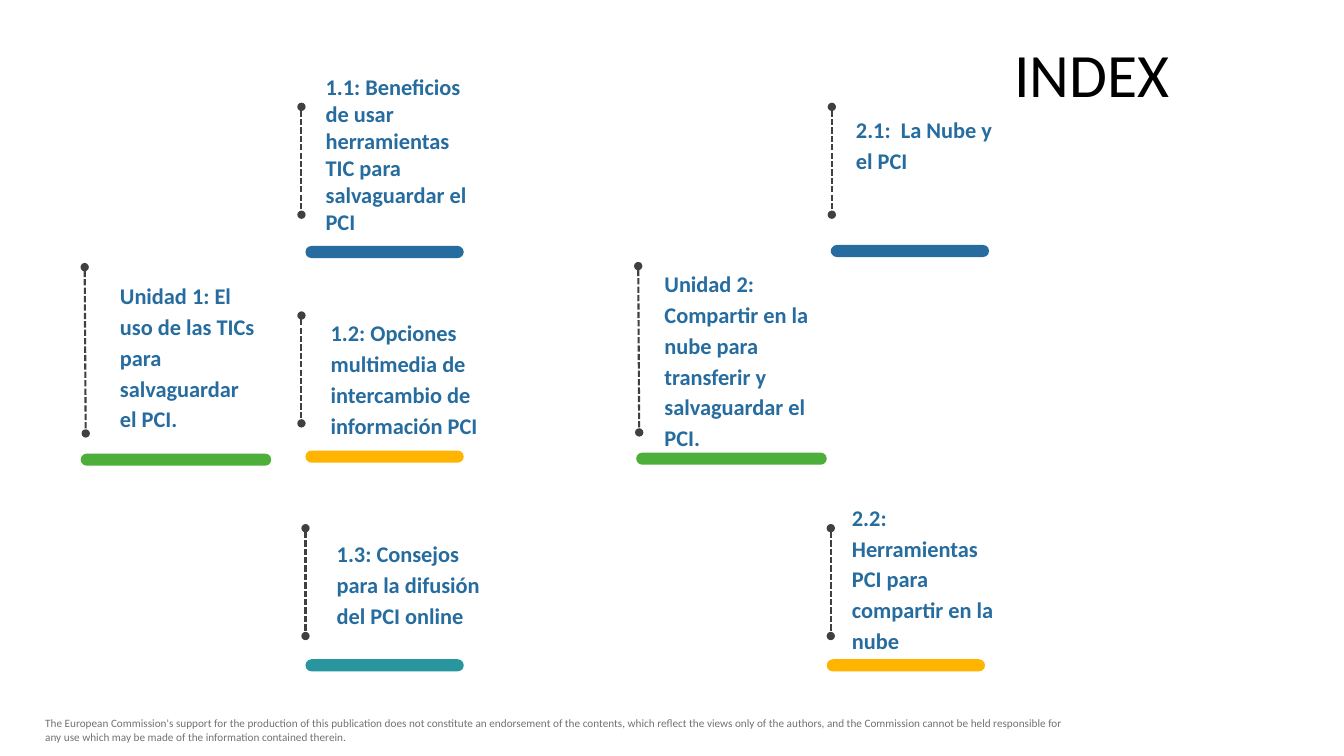
from dataclasses import dataclass

from lxml import etree
from pptx import Presentation
from pptx import util as u
from pptx.dml.color import RGBColor
from pptx.enum import dml, shapes, text
from pptx.oxml.ns import qn

TITLE = ("INDEX", (3.09, 0.37, 8.61, 0.79))
DISCLAIMER = (
    "The European Commission's support for the production of this publication does not "
    "constitute an endorsement of the contents, which reflect the views only of the authors, "
    "and the Commission cannot be held responsible for any use which may be made of the "
    "information contained therein.",
    (0.35, 7.06, 10.46, 0.37),
)


@dataclass
class Theme:
    font: str = "Calibri"
    title_size: int = 44
    entry_size: int = 16
    note_size: int = 8
    black: str = "000000"
    note: str = "767171"
    marker: str = "404040"
    blue: str = "266C9F"
    green: str = "4EAE3A"
    amber: str = "FFB500"
    teal: str = "27969F"


THEME = Theme()

# wording, text box, marker top (x, y), bar corner (x, y), bar colour
UNITS = [
    ("Unidad 1: El uso de las TICs para salvaguardar el PCI.",
     (0.82, 2.71, 1.87, 1.63), (0.84, 2.65), (0.8, 4.5), THEME.green),
    ("Unidad 2: Compartir en la nube para transferir y salvaguardar el PCI.",
     (6.22, 2.59, 2.08, 1.94), (6.33, 2.64), (6.31, 4.49), THEME.green),
]
TOPICS = [
    ("1.1: Beneficios de usar herramientas TIC para salvaguardar el PCI",
     (3.11, 0.68, 1.73, 1.72), (2.99, 1.06), (3.03, 2.44), THEME.blue),
    ("1.2: Opciones multimedia de intercambio de información PCI",
     (3.16, 3.08, 2.14, 1.32), (2.99, 3.13), (3.03, 4.47), THEME.amber),
    ("1.3: Consejos para la difusión del PCI online",
     (3.22, 5.27, 1.73, 1.01), (3.03, 5.24), (3.03, 6.54), THEME.teal),
    ("2.1:  La Nube y el PCI",
     (8.37, 1.06, 1.73, 0.7), (8.25, 1.06), (8.24, 2.43), THEME.blue),
    ("2.2:  Herramientas PCI para compartir en la nube",
     (8.33, 4.91, 1.73, 1.63), (8.24, 5.24), (8.2, 6.54), THEME.amber),
]
BAR_HEIGHT = 0.12
# marker lean and height, bar width, text indent
UNIT_STYLE = dict(lean=0.01, drop=1.65, bar_width=1.89, indent=0.25)
TOPIC_STYLE = dict(lean=0, drop=1.07, bar_width=1.57, indent=0)
SINGLE_SPACED = "1.1"
LOOSE = dict(line_spacing=1.15, space_after=u.Pt(10))
ENTRY_FRAME = dict(
    word_wrap=True, auto_size=text.MSO_AUTO_SIZE.SHAPE_TO_FIT_TEXT,
    margin_left=u.Inches(0.12), margin_right=u.Inches(0.12),
    margin_top=u.Inches(0.05), margin_bottom=u.Inches(0.05),
)


def inches(values):
    return [u.Inches(value) for value in values]


def apply(target, values):
    for name, value in values.items():
        setattr(target, name, value)


def write(box, words, size, colour, bold=False, frame=None, spacing=None):
    apply(box.text_frame, frame or {})
    para = box.text_frame.paragraphs[0]
    apply(para, spacing or {})
    span = para.add_run()
    span.text = words
    apply(span.font, dict(name=THEME.font, size=u.Pt(size), bold=bold))
    span.font.color.rgb = RGBColor.from_string(colour)
    return para


def add_marker(page, left, top, lean, drop):
    """Dashed upright line with a dot at each end."""
    ends = inches((left, top, left + lean, top + drop))
    marker = page.shapes.add_connector(shapes.MSO_CONNECTOR.STRAIGHT, *ends)
    apply(marker.line, dict(width=u.Pt(1.5), dash_style=dml.MSO_LINE.SQUARE_DOT))
    marker.line.color.rgb = RGBColor.from_string(THEME.marker)
    outline = marker.line._get_or_add_ln()
    for end in ("a:headEnd", "a:tailEnd"):
        etree.SubElement(outline, qn(end), type="oval")
    etree.SubElement(marker._element.spPr, qn("a:effectLst"))


def add_bar(page, left, top, width, colour):
    bar = page.shapes.add_shape(shapes.MSO_SHAPE.ROUNDED_RECTANGLE,
                                *inches((left, top, width, BAR_HEIGHT)))
    bar.adjustments[0] = 0.5
    bar.shadow.inherit = False
    bar.fill.solid()
    bar.fill.fore_color.rgb = RGBColor.from_string(colour)
    bar.line.fill.background()


def add_entry(page, entry, style):
    words, area, marker_top, bar_corner, colour = entry
    add_bar(page, *bar_corner, style["bar_width"], colour)
    box = page.shapes.add_textbox(*inches(area))
    spacing = {} if words.startswith(SINGLE_SPACED) else LOOSE
    para = write(box, words, THEME.entry_size, THEME.blue, True, ENTRY_FRAME, spacing)
    if style["indent"]:
        properties = para._p.get_or_add_pPr()
        properties.set("marL", str(u.Inches(style["indent"])))
        properties.set("indent", "0")
    add_marker(page, *marker_top, style["lean"], style["drop"])


def main():
    deck = Presentation()
    apply(deck, dict(slide_width=u.Inches(13.33), slide_height=u.Inches(7.5)))
    page = deck.slides.add_slide(deck.slide_layouts[5])

    words, area = TITLE
    title = page.shapes.title
    apply(title, dict(zip(("left", "top", "width", "height"), inches(area))))
    write(title, words, THEME.title_size, THEME.black,
          frame=dict(auto_size=text.MSO_AUTO_SIZE.NONE,
                     vertical_anchor=text.MSO_ANCHOR.MIDDLE),
          spacing=dict(alignment=text.PP_ALIGN.RIGHT, line_spacing=0.9))

    words, area = DISCLAIMER
    write(page.shapes.add_textbox(*inches(area)), words, THEME.note_size, THEME.note,
          frame=dict(word_wrap=True, auto_size=text.MSO_AUTO_SIZE.SHAPE_TO_FIT_TEXT))

    for entries, style in ((UNITS, UNIT_STYLE), (TOPICS, TOPIC_STYLE)):
        for entry in entries:
            add_entry(page, entry, style)

    deck.save("out.pptx")


if __name__ == "__main__":
    main()
